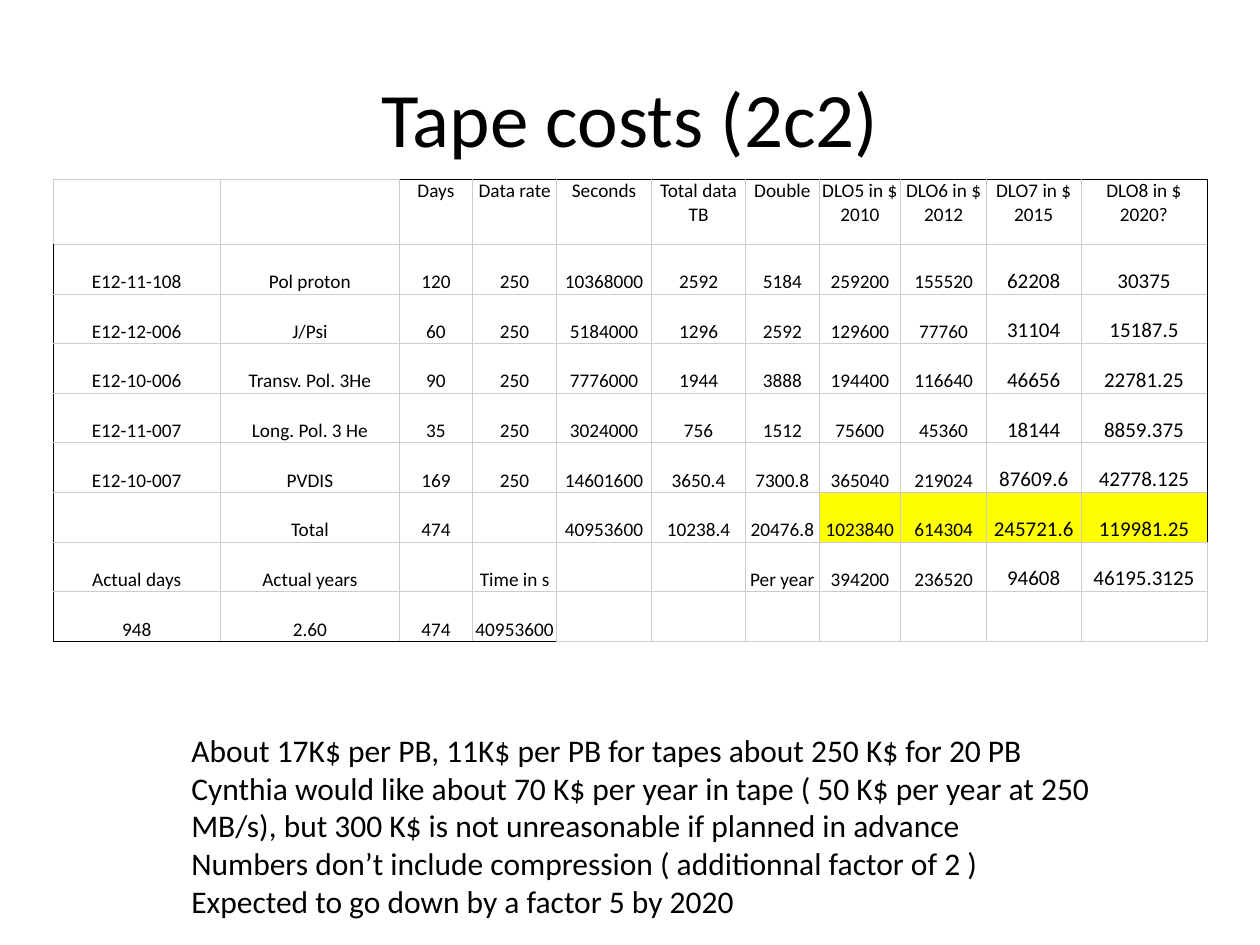
import pptx
import pptx.dml.color
import pptx.enum.text
import pptx.oxml
import pptx.oxml.ns
import pptx.util
from pptx.util import Inches

COLORS = {"text": "000000", "grid": "CCCCCC", "edge": "000000", "highlight": "FFFF00"}
FONT = "Calibri"
CENTER = pptx.enum.text.PP_ALIGN.CENTER
LEFT = pptx.enum.text.PP_ALIGN.LEFT
ANCHOR = pptx.enum.text.MSO_ANCHOR

COLUMN_WIDTHS = [1.33, 1.42, 0.58, 0.67, 0.75, 0.75, 0.58, 0.65, 0.68, 0.75, 1]
TABLE_HEIGHT, HEADER_HEIGHT = 3.67, 0.52
ROWS = [
    ["", "", "Days", "Data rate", "Seconds", "Total data TB", "Double",
     "DLO5 in $\n2010", "DLO6 in $\n2012", "DLO7 in $\n2015", "DLO8 in $\n2020?"],
    ["E12-11-108", "Pol proton", "120", "250", "10368000", "2592", "5184",
     "259200", "155520", "62208", "30375"],
    ["E12-12-006", "J/Psi", "60", "250", "5184000", "1296", "2592",
     "129600", "77760", "31104", "15187.5"],
    ["E12-10-006", "Transv. Pol. 3He", "90", "250", "7776000", "1944", "3888",
     "194400", "116640", "46656", "22781.25"],
    ["E12-11-007", "Long. Pol. 3 He", "35", "250", "3024000", "756", "1512",
     "75600", "45360", "18144", "8859.375"],
    ["E12-10-007", "PVDIS", "169", "250", "14601600", "3650.4", "7300.8",
     "365040", "219024", "87609.6", "42778.125"],
    ["", "Total", "474", "", "40953600", "10238.4", "20476.8",
     "1023840", "614304", "245721.6", "119981.25"],
    ["Actual days", "Actual years", "", "Time in s", "", "", "Per year",
     "394200", "236520", "94608", "46195.3125"],
    ["948", "2.60", "474", "40953600", "", "", "", "", "", "", ""],
]
TOTAL_ROW = 6
FIRST_COST_COLUMN = 7
FIRST_LARGE_COLUMN = 9
NOTES = [
    "About 17K$ per PB, 11K$ per PB for tapes about 250 K$ for 20 PB",
    "Cynthia would like about 70 K$ per year in tape ( 50 K$ per year at 250 MB/s), "
    "but 300 K$ is not unreasonable if planned in advance",
    "Numbers don’t include compression ( additionnal factor of 2 )",
    "Expected to go down by a factor 5 by 2020",
]


def set_attributes(target, values):
    for name, value in values.items():
        setattr(target, name, value)


def write_text(text_frame, text, size, alignment):
    text_frame.text = text
    for paragraph in text_frame.paragraphs:
        paragraph.alignment = alignment
        for run in paragraph.runs:
            set_attributes(run.font, {"name": FONT, "size": pptx.util.Pt(size)})
            run.font.color.rgb = pptx.dml.color.RGBColor.from_string(COLORS["text"])


def border_colors(row, column):
    """Grid lines everywhere, with dark stretches along the outer edge."""
    last_row, last_column = len(ROWS) - 1, len(COLUMN_WIDTHS) - 1
    dark = {
        "L": column == 0 and row > 0,
        "R": column == last_column and row <= TOTAL_ROW,
        "T": row == 0 and column > 1,
        "B": row == last_row and column < 4,
    }
    return {side: COLORS["edge" if is_dark else "grid"] for side, is_dark in dark.items()}


def set_borders(cell, colors):
    properties = cell._tc.get_or_add_tcPr()
    for side, color in colors.items():
        properties.append(pptx.oxml.parse_xml(
            f'<a:ln{side} {pptx.oxml.ns.nsdecls("a")} w="{pptx.util.Pt(0.5)}">'
            f'<a:solidFill><a:srgbClr val="{color}"/></a:solidFill></a:ln{side}>'))


def format_cell(cell, row, column):
    large = row > 0 and column >= FIRST_LARGE_COLUMN
    side_margin = Inches(0.02 if large else 0.01)
    set_attributes(cell, {
        "margin_left": side_margin, "margin_right": side_margin,
        "margin_top": 0, "margin_bottom": 0,
        "vertical_anchor": ANCHOR.BOTTOM if row else ANCHOR.TOP,
    })
    write_text(cell.text_frame, ROWS[row][column], 12 if large else 11, CENTER)
    set_borders(cell, border_colors(row, column))
    if row == TOTAL_ROW and column >= FIRST_COST_COLUMN:
        cell.fill.solid()
        cell.fill.fore_color.rgb = pptx.dml.color.RGBColor.from_string(COLORS["highlight"])
    else:
        cell.fill.background()


def add_title(slide, text):
    title = slide.shapes.title
    set_attributes(title, {"left": Inches(0.5), "top": Inches(0.3),
                           "width": Inches(9), "height": Inches(1.25)})
    title.text_frame.vertical_anchor = ANCHOR.MIDDLE
    write_text(title.text_frame, text, 44, CENTER)


def add_cost_table(slide):
    table = slide.shapes.add_table(
        len(ROWS), len(COLUMN_WIDTHS), Inches(0.42), Inches(1.42),
        Inches(sum(COLUMN_WIDTHS)), Inches(TABLE_HEIGHT)).table
    set_attributes(table, {"first_row": False, "horz_banding": False})
    for column, width in zip(table.columns, COLUMN_WIDTHS):
        column.width = Inches(width)
    body_height = (TABLE_HEIGHT - HEADER_HEIGHT) / (len(ROWS) - 1)
    for row_index, row in enumerate(table.rows):
        row.height = Inches(body_height if row_index else HEADER_HEIGHT)
        for column_index, cell in enumerate(row.cells):
            format_cell(cell, row_index, column_index)


def add_notes_box(slide, lines):
    box = slide.shapes.add_textbox(Inches(1.42), Inches(5.75), Inches(7.42), Inches(1.62))
    set_attributes(box.text_frame, {
        "word_wrap": True,
        "auto_size": pptx.enum.text.MSO_AUTO_SIZE.SHAPE_TO_FIT_TEXT,
    })
    write_text(box.text_frame, "\n".join(lines), 18, LEFT)


def main():
    presentation = pptx.Presentation()
    set_attributes(presentation, {"slide_width": Inches(10), "slide_height": Inches(7.5)})
    # Title Only layout
    slide = presentation.slides.add_slide(presentation.slide_layouts[5])
    add_title(slide, "Tape costs (2c2)")
    add_cost_table(slide)
    add_notes_box(slide, NOTES)
    presentation.save("out.pptx")


if __name__ == "__main__":
    main()
